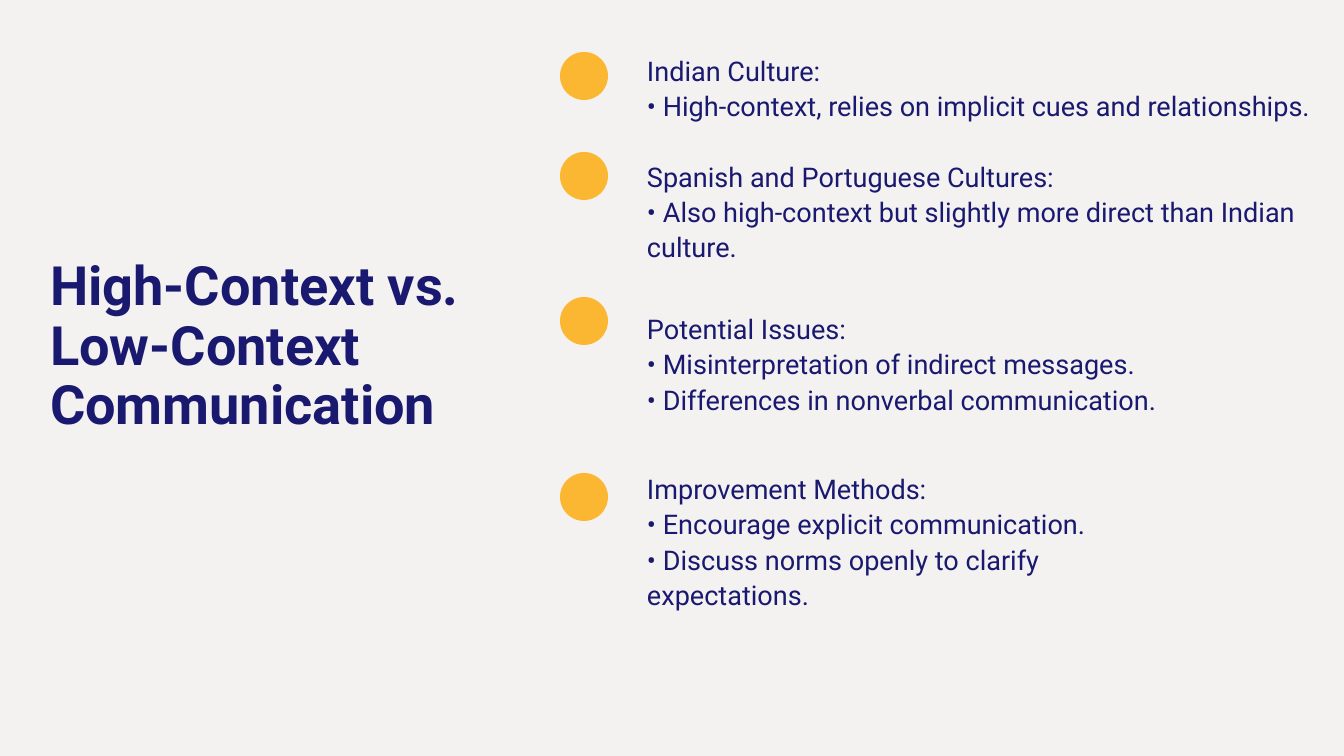
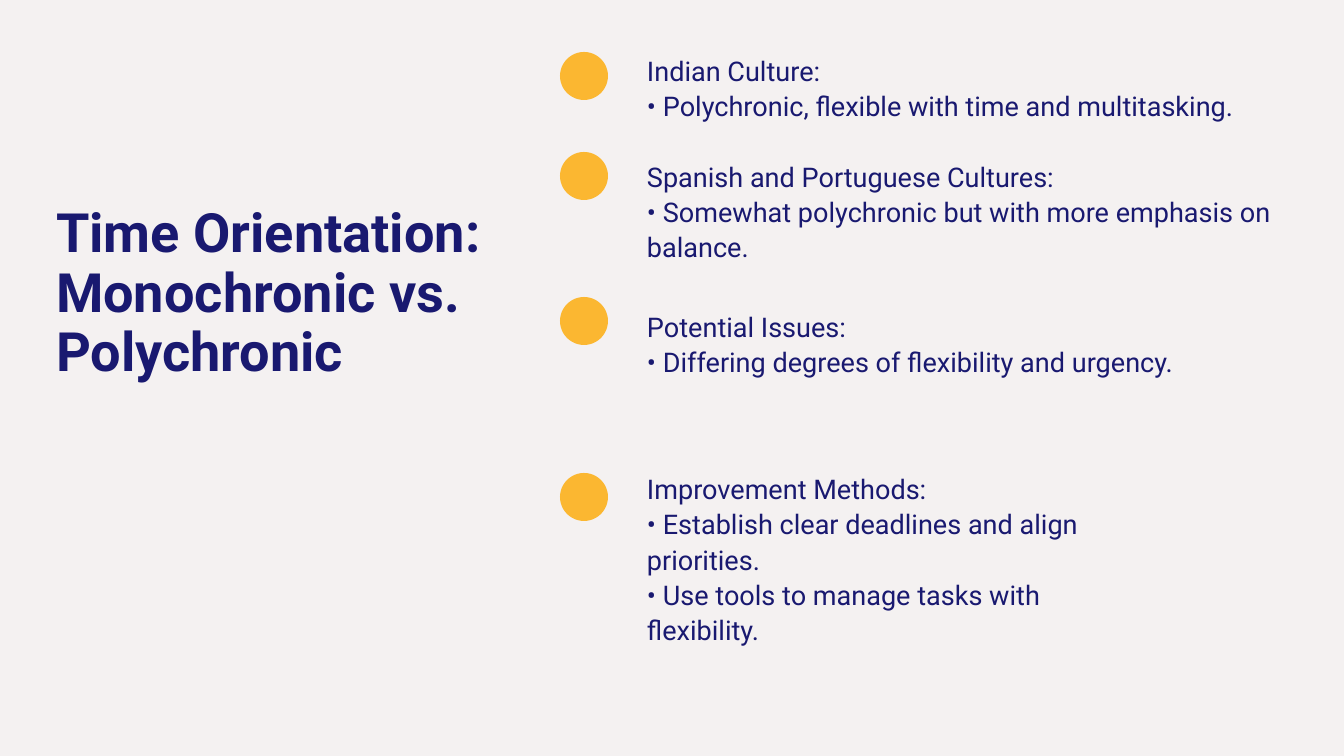
from lxml import etree
from pptx import Presentation
from pptx import util as u
from pptx.dml.color import RGBColor
from pptx.enum import shapes, text
from pptx.oxml.ns import qn

COLORS = {"background": "F4F1F1", "navy": "191970", "amber": "FBB731"}
FONT = "Roboto"
PX = 914400 / 67.2
COMPARISON_LAYOUT = 4

# Each box holds (left, top, width, height) and its topics;
# a topic is a heading followed by its points.
SLIDES = [
    {
        "title": "High-Context vs. Low-Context Communication",
        "title_box": (50, 257, 452, 179),
        "boxes": [
            ((647, 52, 665, 245), [
                ["Indian Culture:",
                 "• High-context, relies on implicit cues and relationships."],
                ["Spanish and Portuguese Cultures:",
                 "• Also high-context but slightly more direct than Indian culture."],
            ]),
            ((647, 310, 552, 140), [
                ["Potential Issues:",
                 "• Misinterpretation of indirect messages.",
                 "• Differences in nonverbal communication."],
            ]),
            ((647, 470, 504, 210), [
                ["Improvement Methods:",
                 "• Encourage explicit communication.",
                 "• Discuss norms openly to clarify expectations."],
            ]),
        ],
    },
    {
        "title": "Time Orientation: Monochronic vs. Polychronic",
        "title_box": (56, 204, 452, 239),
        "boxes": [
            ((647, 52, 665, 245), [
                ["Indian Culture:",
                 "• Polychronic, flexible with time and multitasking."],
                ["Spanish and Portuguese Cultures:",
                 "• Somewhat polychronic but with more emphasis on balance."],
            ]),
            ((647, 308, 552, 105), [
                ["Potential Issues:",
                 "• Differing degrees of flexibility and urgency."],
            ]),
            ((647, 470, 504, 280), [
                ["Improvement Methods:",
                 "• Establish clear deadlines and align priorities.",
                 "• Use tools to manage tasks with flexibility."],
            ]),
        ],
    },
]

DOT_LEFT, DOT_SIZE = 560, 48
DOT_TOPS = [52, 152, 297, 473]

TITLE_STYLE = {"size": 58, "line": 63.8, "bold": True}
BODY_STYLE = {"size": 29, "line": 37.7, "bold": False}


def px(value):
    return u.Emu(round(value * PX))


def color(name):
    return RGBColor.from_string(COLORS[name])


def place(shape, box):
    shape.left, shape.top, shape.width, shape.height = map(px, box)


def prepare_frame(shape, box):
    place(shape, box)
    frame = shape.text_frame
    frame.margin_left = frame.margin_top = frame.margin_right = frame.margin_bottom = 0
    frame.word_wrap = True
    frame.auto_size = text.MSO_AUTO_SIZE.NONE
    frame.vertical_anchor = text.MSO_ANCHOR.TOP
    return frame


def format_paragraph(paragraph, style, space_before=0):
    paragraph.alignment = text.PP_ALIGN.LEFT
    paragraph.line_spacing = u.Pt(style["line"])
    paragraph.space_before = u.Pt(space_before)
    paragraph.space_after = u.Pt(0)
    font = paragraph.font
    font.name, font.size, font.bold = FONT, u.Pt(style["size"]), style["bold"]
    font.color.rgb = color("navy")


def clear_list_indent(paragraph):
    """Drop the bullet and indent that the layout gives to body text."""
    properties = paragraph._p.get_or_add_pPr()
    properties.set("marL", "0")
    properties.set("indent", "0")
    bullet_none = etree.Element(qn("a:buNone"))
    properties.find(qn("a:spcAft")).addnext(bullet_none)


def fill_title(shape, title, box):
    frame = prepare_frame(shape, box)
    frame.text = title
    format_paragraph(frame.paragraphs[0], TITLE_STYLE)


def fill_topics(shape, topics, box):
    """Write the topics, one empty line apart."""
    frame = prepare_frame(shape, box)
    frame.text = "\n".join(line for topic in topics for line in topic)
    paragraphs = iter(frame.paragraphs)
    for topic_number, topic in enumerate(topics):
        for line_number in range(len(topic)):
            paragraph = next(paragraphs)
            starts_later_topic = topic_number > 0 and line_number == 0
            format_paragraph(paragraph, BODY_STYLE,
                             BODY_STYLE["line"] if starts_later_topic else 0)
            clear_list_indent(paragraph)


def add_dot(slide, top):
    dot = slide.shapes.add_shape(shapes.MSO_SHAPE.OVAL, px(DOT_LEFT), px(top),
                                 px(DOT_SIZE), px(DOT_SIZE))
    dot.shadow.inherit = False
    dot.fill.solid()
    dot.fill.fore_color.rgb = color("amber")
    dot.line.fill.background()


def remove_empty_placeholders(slide):
    for placeholder in list(slide.placeholders):
        if not placeholder.text_frame.text:
            placeholder._element.getparent().remove(placeholder._element)


def add_topic_slide(presentation, content):
    slide = presentation.slides.add_slide(presentation.slide_layouts[COMPARISON_LAYOUT])
    fill_title(slide.shapes.title, content["title"], content["title_box"])
    for index, (box, topics) in enumerate(content["boxes"], start=1):
        fill_topics(slide.placeholders[index], topics, box)
    remove_empty_placeholders(slide)
    for top in DOT_TOPS:
        add_dot(slide, top)


def main():
    presentation = Presentation()
    presentation.slide_width, presentation.slide_height = px(1344), px(756)
    background = presentation.slide_master.background.fill
    background.solid()
    background.fore_color.rgb = color("background")
    for content in SLIDES:
        add_topic_slide(presentation, content)
    presentation.save("out.pptx")


if __name__ == "__main__":
    main()
